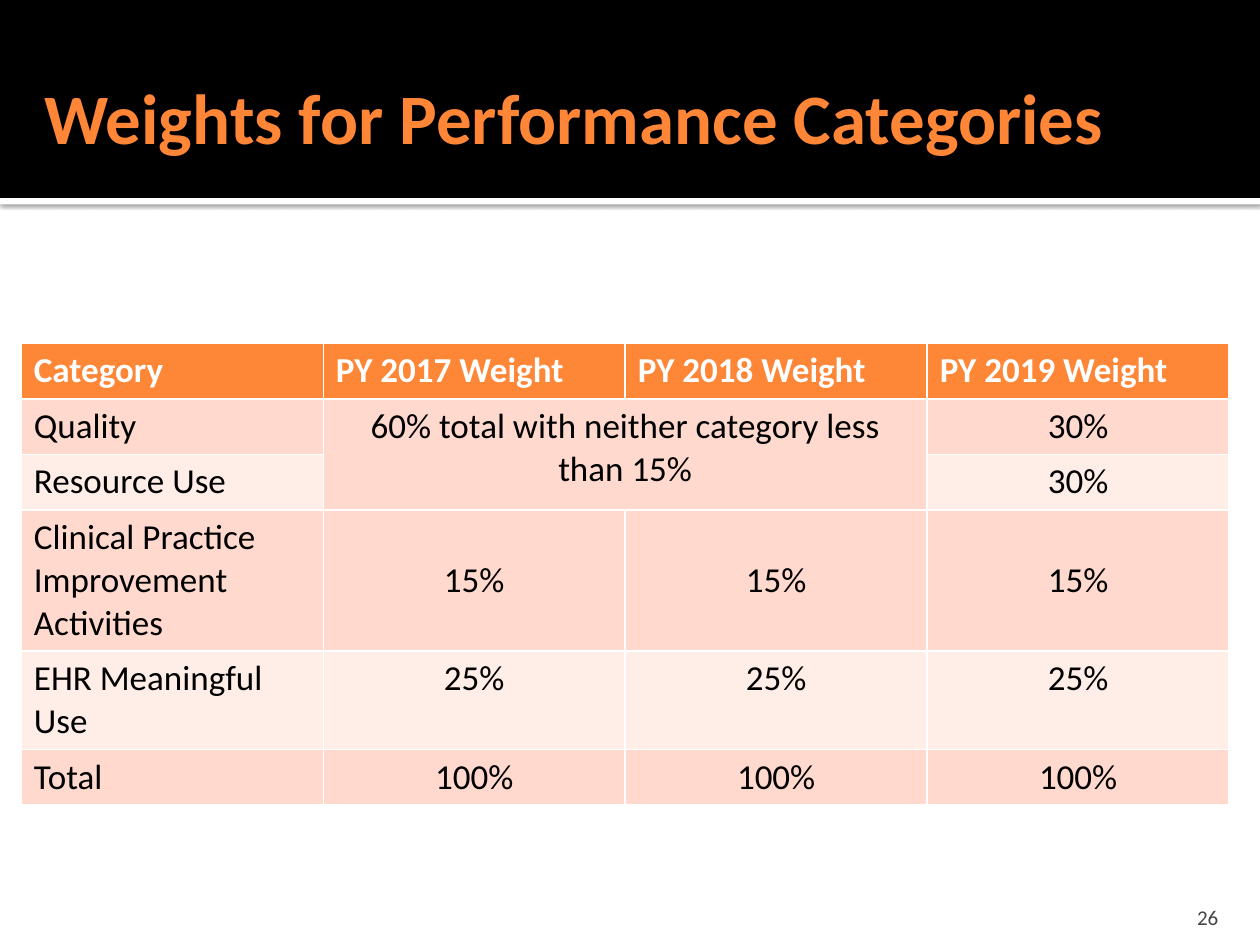
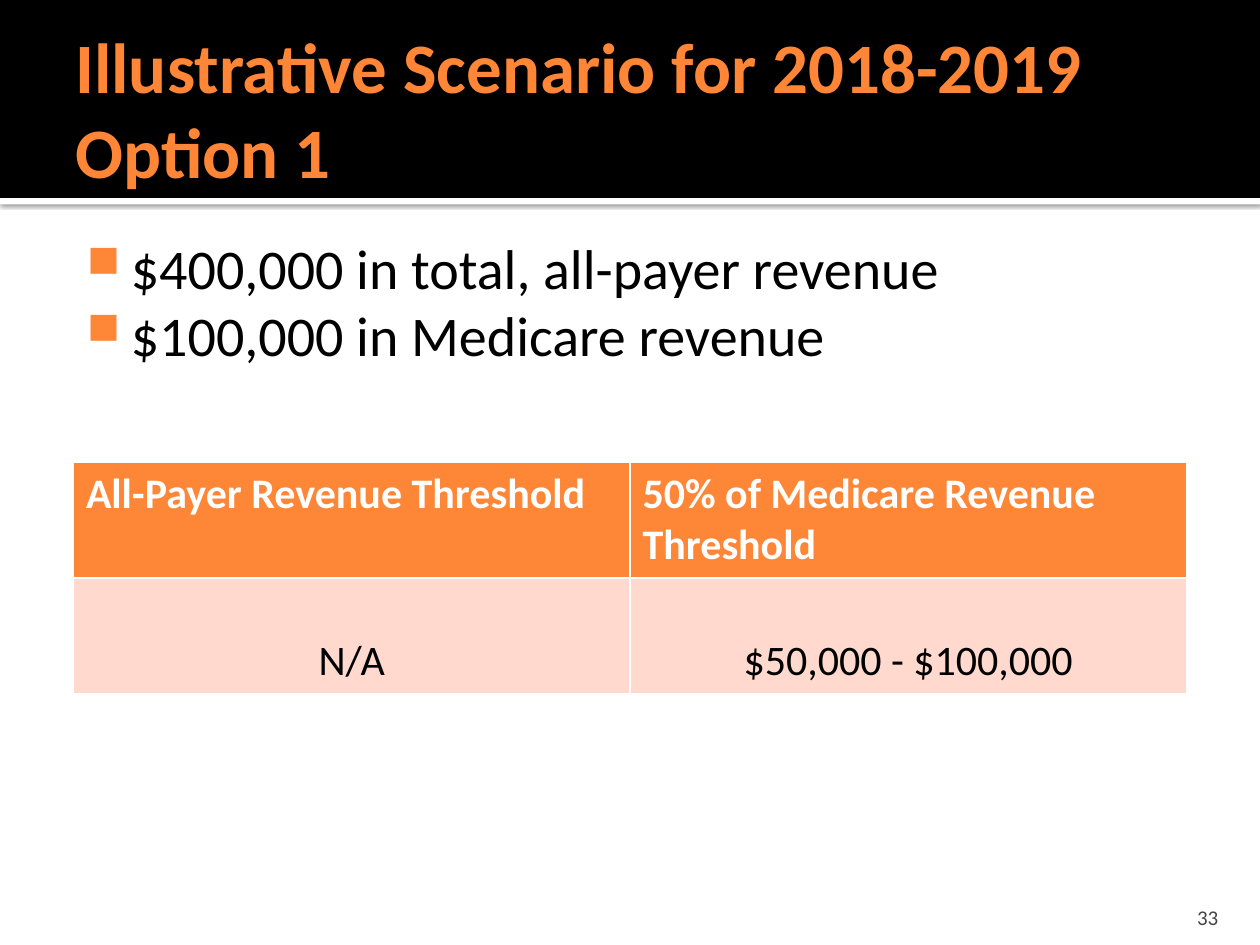
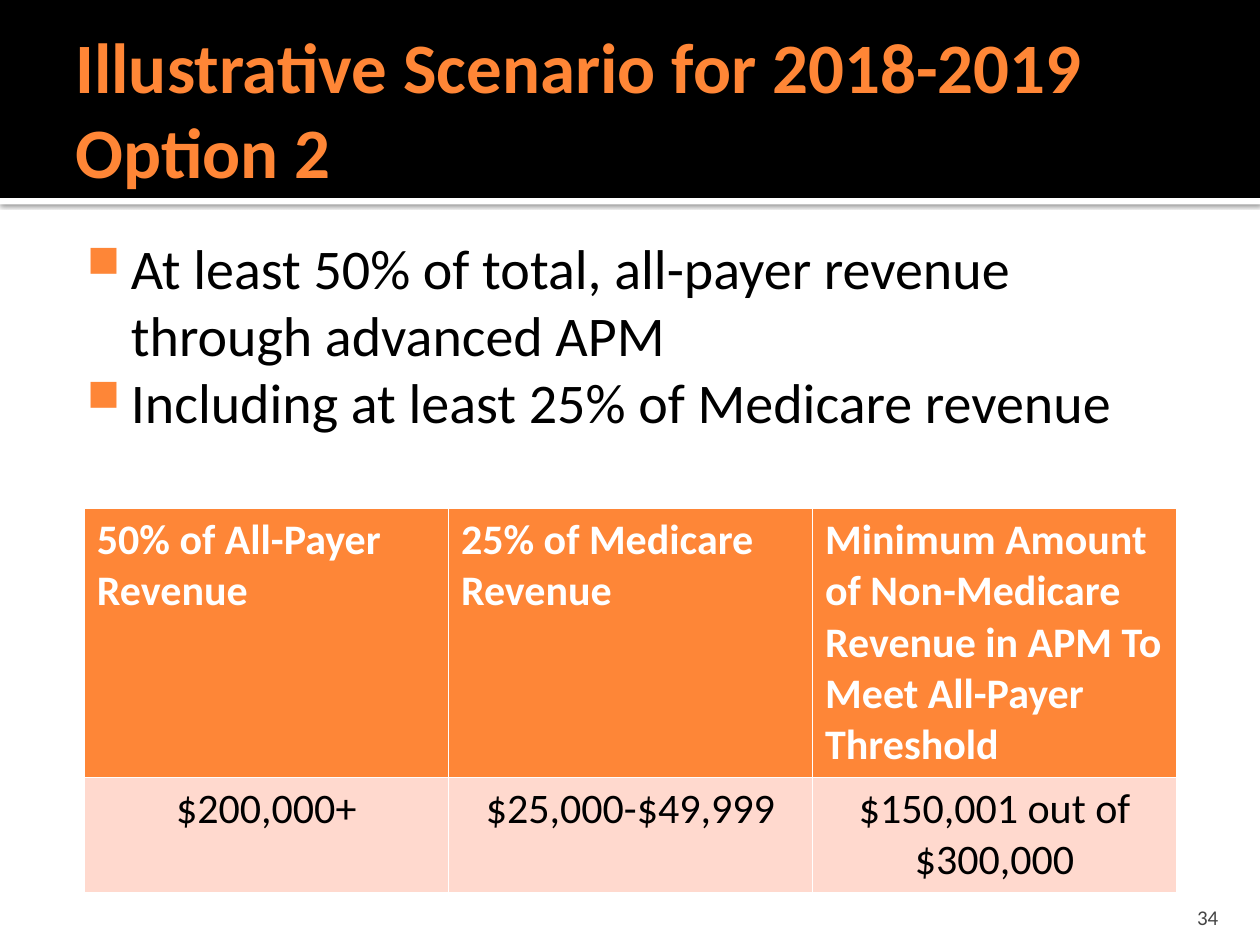
from lxml import etree
from pptx import Presentation
from pptx.dml.color import RGBColor
from pptx.enum.shapes import MSO_SHAPE
from pptx.enum.text import MSO_ANCHOR as Anchor, MSO_AUTO_SIZE as AutoSize, PP_ALIGN as Align
from pptx.oxml.ns import qn
from pptx.util import Cm, Pt

COLORS = {
    "title": "FF8636",
    "accent": "FE8637",
    "band_dark": "FFD9CE",
    "band_light": "FFEDE8",
    "black": "000000",
    "white": "FFFFFF",
    "number": "454545",
}
FONT = "Calibri"
SLIDE_W, SLIDE_H = 25.4, 19.05
HEADER_H, STRIPE_H = 3.99, 0.13
TITLE_BOX = (1.27, 0.43, 22.86, 3.48)


def rgb(name):
    return RGBColor.from_string(COLORS[name])


def lengths(box):
    return [Cm(value) for value in box]


def style(paragraph, size, color, bold=False, align=Align.LEFT):
    paragraph.alignment = align
    font = paragraph.font
    font.name, font.size, font.bold = FONT, Pt(size), bold
    font.color.rgb = rgb(color)


def set_frame(frame, insets, anchor):
    frame.word_wrap = True
    frame.auto_size = AutoSize.NONE
    frame.vertical_anchor = anchor
    (frame.margin_left, frame.margin_top,
     frame.margin_right, frame.margin_bottom) = lengths(insets)


def add_band(slide, box, color):
    band = slide.shapes.add_shape(MSO_SHAPE.RECTANGLE, *lengths(box))
    band.fill.solid()
    band.fill.fore_color.rgb = rgb(color)
    band.line.fill.background()
    band.shadow.inherit = False
    # Bands lie behind the title
    slide.shapes.title.element.addprevious(band.element)
    return band


def add_drop_shadow(band):
    effects = band.element.spPr.find(qn("a:effectLst"))
    shadow = etree.SubElement(effects, qn("a:outerShdw"), blurRad=str(Pt(2.5)),
                              dist=str(Pt(0.8)), dir="5400000", rotWithShape="0")
    tint = etree.SubElement(shadow, qn("a:srgbClr"), val=COLORS["black"])
    etree.SubElement(tint, qn("a:alpha"), val="60000")


def add_base(prs, heading, number, title_box=TITLE_BOX):
    """Slide with header bands, title and slide number."""
    slide = prs.slides.add_slide(prs.slide_layouts[5])
    stripe = add_band(slide, (0, HEADER_H, SLIDE_W, STRIPE_H), "white")
    add_drop_shadow(stripe)
    add_band(slide, (0, 0, SLIDE_W, HEADER_H), "black")

    # Title
    title = slide.shapes.title
    title.left, title.top, title.width, title.height = lengths(title_box)
    title.text_frame.text = heading
    set_frame(title.text_frame, (0.25, 0.13, 0.13, 0.13), Anchor.MIDDLE)
    style(title.text_frame.paragraphs[0], 40.5, "title", bold=True)

    # Slide number
    frame = slide.shapes.add_textbox(*lengths((22.78, 17.98, 2.03, 0.76))).text_frame
    frame.text = str(number)
    set_frame(frame, (0.25, 0.13, 0.25, 0), Anchor.BOTTOM)
    style(frame.paragraphs[0], 12, "number", align=Align.RIGHT)
    return slide


def add_bullets(slide, box, points):
    frame = slide.shapes.add_textbox(*lengths(box)).text_frame
    frame.text = "\n".join(points)
    set_frame(frame, (0.15, 0.25, 0.25, 0.13), Anchor.TOP)
    for point in frame.paragraphs:
        props = point._p.get_or_add_pPr()
        props.set("marL", str(Cm(1.22)))
        props.set("indent", str(Cm(-0.89)))
        color = etree.SubElement(props, qn("a:buClr"))
        etree.SubElement(color, qn("a:srgbClr"), val=COLORS["accent"])
        etree.SubElement(props, qn("a:buSzPct"), val="80000")
        etree.SubElement(props, qn("a:buChar"), char="■")
        style(point, 32, "black")


def add_grid(slide, left, top, width, row_heights, rows, size, centered_from=0):
    """Table with an accent header and banded rows; columns share the width."""
    columns = len(rows[0])
    table = slide.shapes.add_table(
        len(rows), columns, *lengths((left, top, width, sum(row_heights)))).table
    for column in table.columns:
        column.width = Cm(width / columns)
    for r, (height, texts) in enumerate(zip(row_heights, rows)):
        table.rows[r].height = Cm(height)
        header = r == 0
        fill = "accent" if header else "band_dark" if r % 2 else "band_light"
        for c, text in enumerate(texts):
            cell = table.cell(r, c)
            cell.fill.solid()
            cell.fill.fore_color.rgb = rgb(fill)
            cell.text = text
            centered = not header and c >= centered_from
            for paragraph in cell.text_frame.paragraphs:
                style(paragraph, size, "white" if header else "black", header,
                      Align.CENTER if centered else Align.LEFT)
    return table


def add_weights_slide(prs):
    slide = add_base(prs, "Weights for Performance Categories", 26,
                     (0.64, 0.76, 24.13, 3.18))
    rows = [
        ["Category"] + [f"PY {year} Weight" for year in (2017, 2018, 2019)],
        ["Quality", "60% total with neither category less\nthan 15%", "", "30%"],
        ["Resource Use", "", "", "30%"],
        ["Clinical Practice Improvement Activities"] + ["15%"] * 3,
        ["EHR Meaningful Use"] + ["25%"] * 3,
        ["Total"] + ["100%"] * 3,
    ]
    weights = add_grid(slide, 0.43, 6.92, 24.35, [1.11, 1.11, 1.11, 2.83, 1.97, 1.11],
                       rows, 20, centered_from=1)
    weights.cell(1, 1).merge(weights.cell(2, 2))
    for c in range(1, 4):
        weights.cell(3, c).vertical_anchor = Anchor.MIDDLE


def add_option_1_slide(prs):
    slide = add_base(prs, "Illustrative Scenario for 2018-2019 Option 1", 33)
    add_bullets(slide, (1.27, 4.45, 22.86, 3.38),
                ["$400,000 in total, all-payer revenue", "$100,000 in Medicare revenue"])
    thresholds = add_grid(slide, 1.48, 9.32, 22.44, [2.33, 2.33], [
        ["All-Payer Revenue Threshold", "50% of Medicare Revenue Threshold"],
        ["N/A", "$50,000 - $100,000"],
    ], 24)
    for c in range(2):
        thresholds.cell(1, c).vertical_anchor = Anchor.BOTTOM


def add_option_2_slide(prs):
    slide = add_base(prs, "Illustrative Scenario for 2018-2019 Option 2", 34)
    add_bullets(slide, (1.27, 4.45, 22.86, 4.24),
                ["At least 50% of total, all-payer revenue through advanced APM",
                 "Including at least 25% of Medicare revenue"])
    add_grid(slide, 1.7, 10.25, 22.02, [5.4, 2.3], [
        ["50% of All-Payer Revenue", "25% of Medicare Revenue",
         "Minimum Amount of Non-Medicare Revenue in APM To Meet All-Payer Threshold"],
        ["$200,000+", "$25,000-$49,999", "$150,001 out of $300,000"],
    ], 24)


def main():
    prs = Presentation()
    prs.slide_width, prs.slide_height = Cm(SLIDE_W), Cm(SLIDE_H)
    add_weights_slide(prs)
    add_option_1_slide(prs)
    add_option_2_slide(prs)
    prs.save("out.pptx")


if __name__ == "__main__":
    main()
